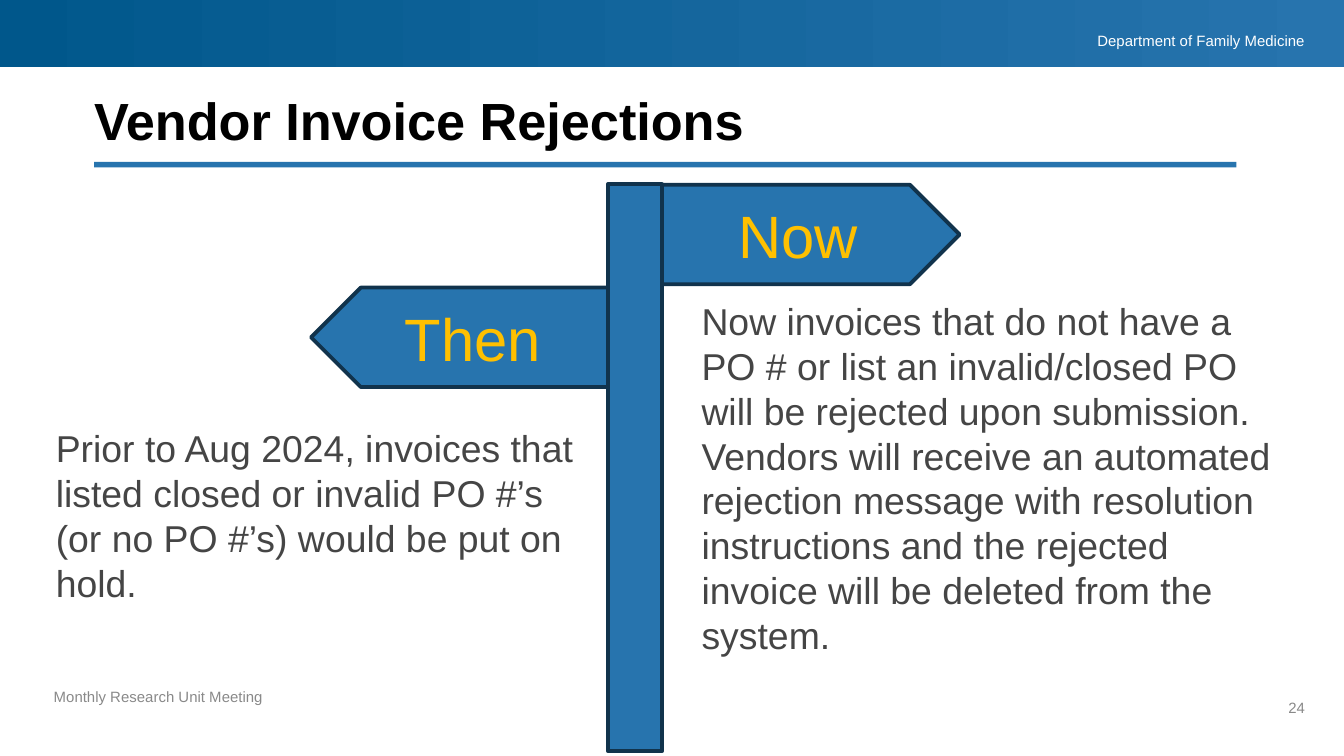
from pptx import Presentation, util as u
from pptx.dml.color import RGBColor
from pptx.enum import shapes, text

CELL = u.Inches(0.1)  # the slide is a grid of 100 columns by 56.25 rows
COLUMNS, ROWS = 100, 56.25
BLUE, NAVY, EDGE = "2774AE", "00578B", "11334C"
GOLD, WHITE, BLACK, BODY, GREY = "FFC000", "FFFFFF", "000000", "454545", "898989"
LEFT, CENTER, RIGHT = text.PP_ALIGN.LEFT, text.PP_ALIGN.CENTER, text.PP_ALIGN.RIGHT
TOP, MIDDLE, BOTTOM = text.MSO_ANCHOR.TOP, text.MSO_ANCHOR.MIDDLE, text.MSO_ANCHOR.BOTTOM

deck = Presentation()
deck.slide_width, deck.slide_height = int(COLUMNS * CELL), int(ROWS * CELL)
slide = deck.slides.add_slide(deck.slide_layouts[6])


def add_block(kind, column, row, columns, rows, edge=None):
    """Add a blue preset shape on the grid, outlined when edge is given."""
    block = slide.shapes.add_shape(kind, *(int(n * CELL) for n in (column, row, columns, rows)))
    block.shadow.inherit = False
    block.fill.solid()
    block.fill.fore_color.rgb = RGBColor.from_string(BLUE)
    if edge:
        block.line.color.rgb = RGBColor.from_string(edge)
        block.line.width = u.Pt(2)
    else:
        block.line.fill.background()
    return block


def write(shape, words, size, color, align=LEFT, anchor=TOP, right_inset=0):
    """Set one paragraph of text in a shape and return it."""
    frame = shape.text_frame
    frame.word_wrap = True
    frame.vertical_anchor = anchor
    frame.margin_left = frame.margin_top = frame.margin_bottom = 0
    frame.margin_right = int(right_inset * CELL)
    paragraph = frame.paragraphs[0]
    paragraph.text = words
    paragraph.alignment = align
    paragraph.font.name = "Arial"
    paragraph.font.size = u.Pt(size)
    paragraph.font.color.rgb = RGBColor.from_string(color)
    return paragraph


# Header band and title rule
add_block(shapes.MSO_SHAPE.RECTANGLE, 7, 12.05, 85, 0.4)
header = add_block(shapes.MSO_SHAPE.RECTANGLE, 0, 0, COLUMNS, 5)
header.fill.gradient()
header.fill.gradient_angle = 0
for stop, color in zip(header.fill.gradient_stops, (NAVY, BLUE)):
    stop.color.rgb = RGBColor.from_string(color)

# Title, explanations, department and footer
texts = [
    ((72, 2.35, 25.1, 1.4), "Department of Family Medicine", 8, WHITE, RIGHT, TOP, 0),
    ((4, 51.15, 39, 1.4), "Monthly Research Unit Meeting", 8, GREY, LEFT, TOP, 0),
    ((92.1, 52, 5, 4), "24", 8, GREY, RIGHT, TOP, 0),
    ((7, 7, 85, 4.3), "Vendor Invoice Rejections", 28, BLACK, LEFT, BOTTOM, 0),
    ((4.15, 31.65, 44.2, 14.6),
     "Prior to Aug 2024, invoices that listed closed or invalid PO #’s "
     "(or no PO #’s) would be put on hold.", 20, BODY, LEFT, TOP, 4),
    ((52.2, 22.2, 46.6, 28.4),
     "Now invoices that do not have a PO # or list an invalid/closed PO "
     "will be rejected upon submission. Vendors will receive an automated "
     "rejection message with resolution instructions and the rejected "
     "invoice will be deleted from the system.", 20, BODY, LEFT, TOP, 4),
]
for place, words, size, color, align, anchor, right_inset in texts:
    box = slide.shapes.add_textbox(*(int(n * CELL) for n in place))
    paragraph = write(box, words, size, color, align, anchor, right_inset)
    if anchor == BOTTOM:
        paragraph.font.bold = True
        paragraph.line_spacing = 0.9

# Signpost: two arms, then the post in front of them
for words, column, row, points_left in (("Now", 49.2, 13.75, False), ("Then", 23.15, 21.4, True)):
    arm = add_block(shapes.MSO_SHAPE.PENTAGON, column, row, 22.2, 7.4, EDGE)
    if points_left:
        arm.element.spPr.xfrm.set("flipH", "1")
    write(arm, words, 32, GOLD, CENTER, MIDDLE)
add_block(shapes.MSO_SHAPE.RECTANGLE, 45.25, 13.7, 4, 42.2, EDGE)

deck.save("out.pptx")
